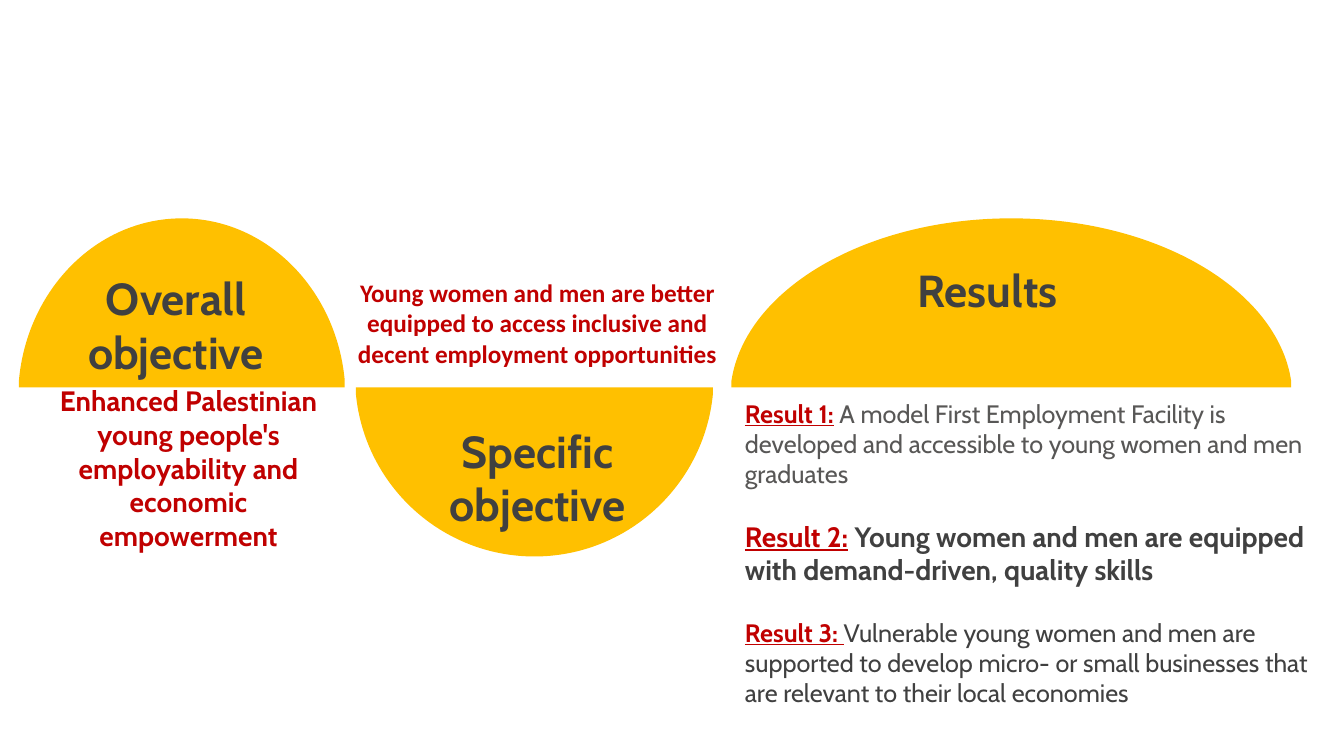
from lxml.etree import SubElement as Sub
from pptx import Presentation
from pptx.dml.color import RGBColor as Rgb
from pptx.enum.text import MSO_ANCHOR as Anchor, MSO_AUTO_SIZE as Auto, PP_ALIGN as Align
from pptx.oxml.ns import qn
from pptx.util import Pt

COLORS = {"gold": "FFC000", "dark": "404040", "gray": "585756", "red": "C00000"}
BASE = 276.75
RISE = 120.75

RESULTS = [
    ("Result 1:", " ", "A model First Employment Facility is developed and accessible "
     "to young women and men graduates", 18, "gray", False),
    ("Result 2:", " ", "Young women and men are equipped with demand-driven, "
     "quality skills", 20, "dark", True),
    ("Result 3: ", "", "Vulnerable young women and men are supported to develop micro- "
     "or small businesses that are relevant to their local economies", 18, "dark", False),
]


def style(run, size, color, bold=True, face="Cabin"):
    font = run.font
    font.name, font.size, font.bold = face, Pt(size), bold
    font.color.rgb = Rgb.from_string(COLORS[color])


def add_box(shapes, left, top, width, height, anchor=Anchor.TOP):
    frame = shapes.add_textbox(Pt(left), Pt(top), Pt(width), Pt(height)).text_frame
    frame.word_wrap = True
    frame.vertical_anchor = anchor
    return frame


def add_text(shapes, box, text, size, color, anchor=Anchor.TOP, face="Cabin"):
    frame = add_box(shapes, *box, anchor)
    frame.auto_size = Auto.SHAPE_TO_FIT_TEXT
    frame.text = text
    line = frame.paragraphs[0]
    line.alignment = Align.CENTER
    style(line.runs[0], size, color, face=face)


def bend(line, points):
    curve = line.getparent().makeelement(qn("a:cubicBezTo"))
    for x, y in points:
        Sub(curve, qn("a:pt"), x=str(x), y=str(y))
    curve.append(line[0])
    line.getparent().replace(line, curve)


def add_dome(slide, left, width, side, title, inset):
    shapes = slide.shapes.add_group_shape().shapes
    radius = width / 2

    def spot(x, y):
        return Pt(left + radius + radius * x), Pt(BASE - side * RISE * y)

    peak = spot(0, 1)
    edge = [spot(1, 0.04), spot(1, 0), spot(-1, 0), spot(-1, 0.04), peak]
    outline = shapes.build_freeform(*peak)
    outline.add_line_segments(edge, close=True)
    dome = outline.convert_to_shape()
    lines = list(dome._element.iter(qn("a:lnTo")))
    for line, pulls in ((lines[0], [(0.52, 1), (0.95, 0.58)]),
                        (lines[4], [(-0.95, 0.58), (-0.52, 1)])):
        pulls = [spot(x, y) for x, y in pulls]
        bend(line, [(x - dome.left, y - dome.top) for x, y in pulls])
    dome.shadow.inherit = False
    dome.fill.solid()
    dome.fill.fore_color.rgb = Rgb.from_string(COLORS["gold"])
    dome.line.fill.background()
    dx, dy, wide, high = inset
    add_text(shapes, (left + dx, BASE + dy, wide, high), title, 32, "dark")


def add_results(slide, left, top, width, height):
    frame = add_box(slide.shapes, left, top, width, height)
    for index, (label, gap, text, size, color, bold) in enumerate(RESULTS):
        line = frame.add_paragraph() if index else frame.paragraphs[0]
        if index:
            line.space_before = Pt(21.75)
        head, body = line.add_run(), line.add_run()
        head.text, body.text = label, gap + text
        style(head, size, "red")
        head.font.underline = True
        style(body, size, color, bold)


def main():
    deck = Presentation()
    deck.slide_width, deck.slide_height = Pt(960), Pt(540)
    slide = deck.slides.add_slide(deck.slide_layouts[6])
    add_dome(slide, 522.5, 399.75, 1, "Results", (45, -92.5, 275.75, 46))
    add_dome(slide, 13.5, 232.75, 1, "Overall objective", (41.75, -86.75, 141, 85))
    add_dome(slide, 254.25, 255, -1, "Specific objective", (29.25, 22, 201, 85))
    add_text(slide.shapes, (25.25, 282, 218.75, 104.5),
             "Enhanced Palestinian young people's employability and economic empowerment",
             20, "red", Anchor.MIDDLE)
    add_text(slide.shapes, (242.75, 194.25, 282.25, 72.75),
             "Young women and men are better equipped to access inclusive and "
             "decent employment opportunities", 18, "red", Anchor.MIDDLE, "Calibri")
    add_results(slide, 525, 280.75, 418.25, 250.5)
    deck.save("out.pptx")


if __name__ == "__main__":
    main()
